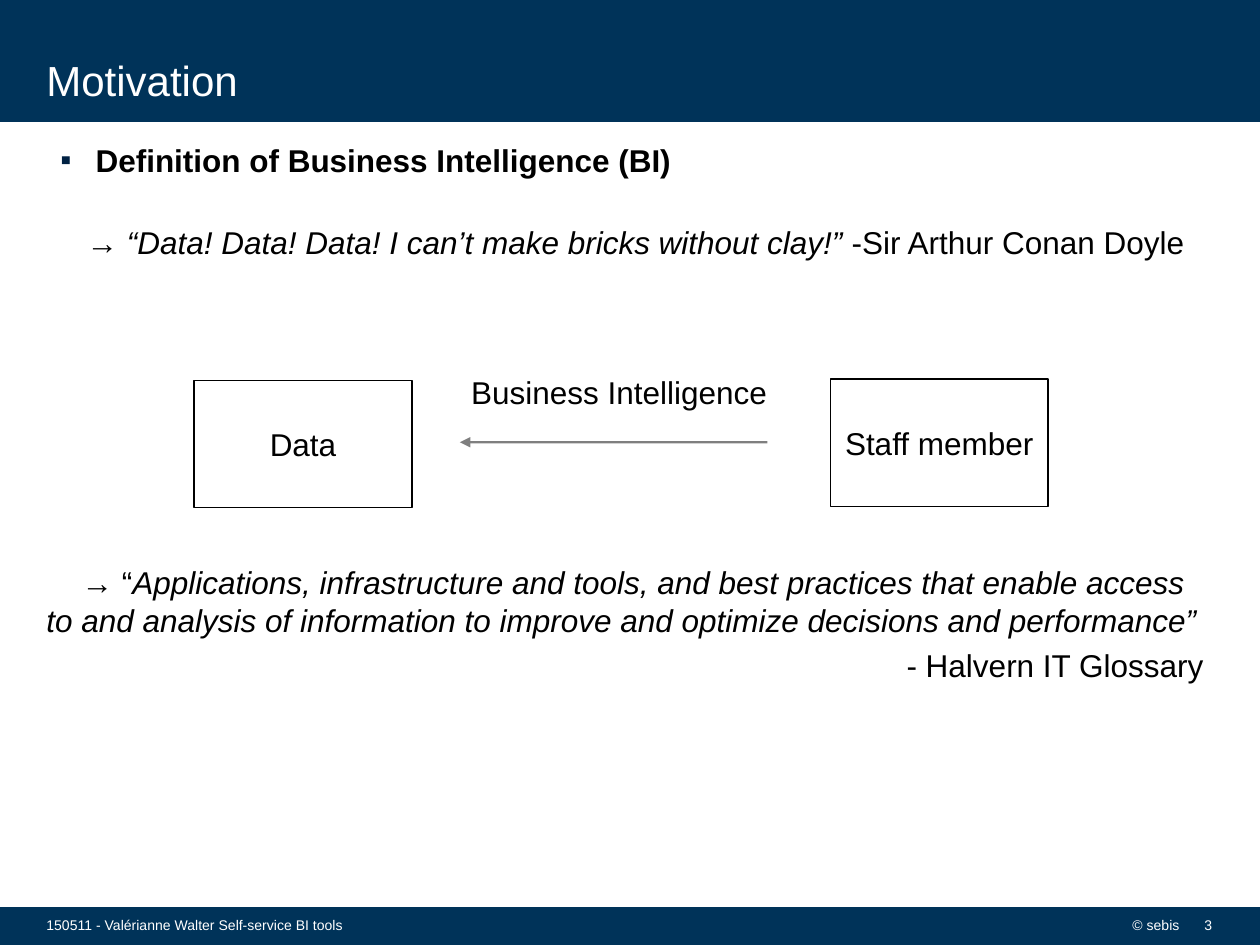
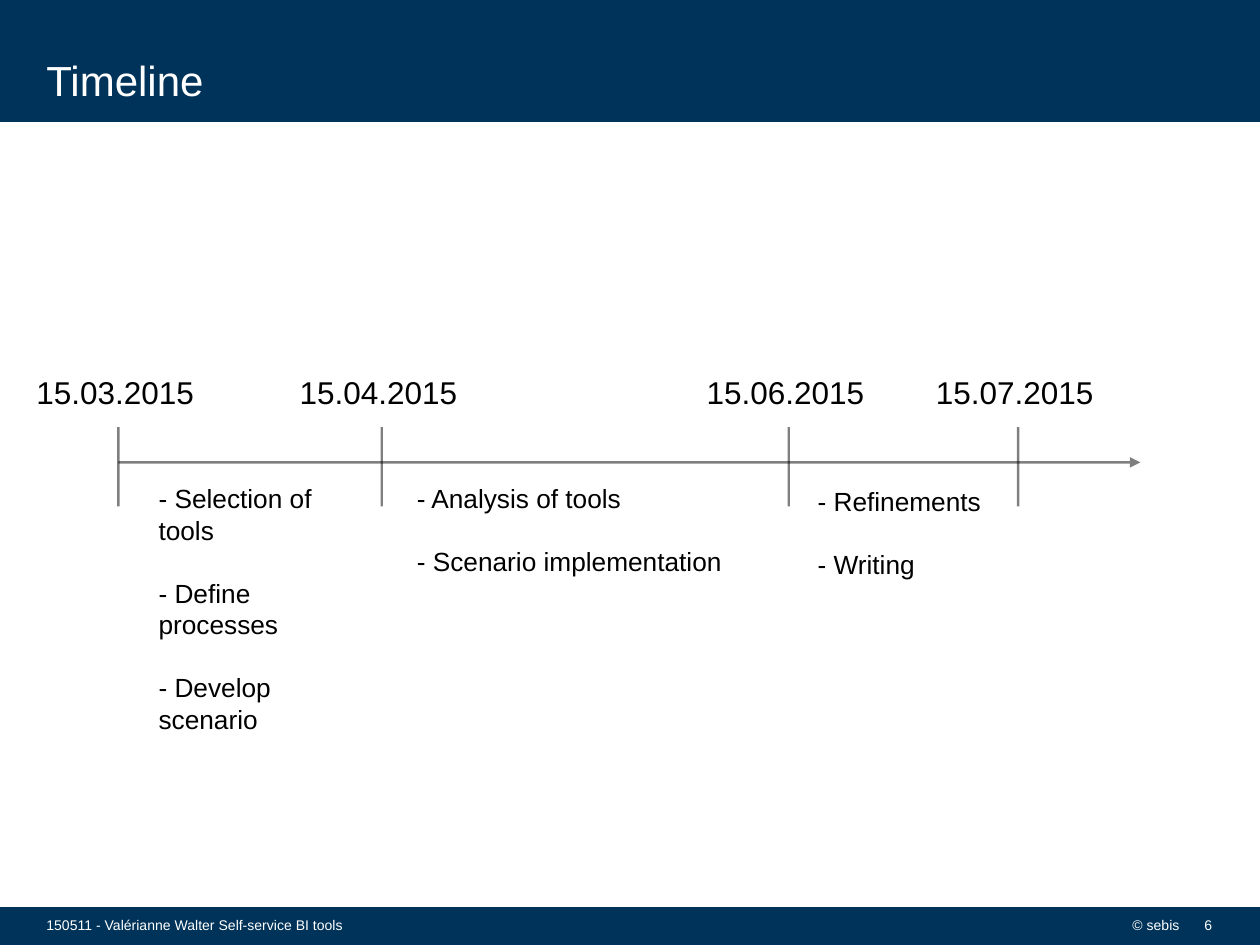
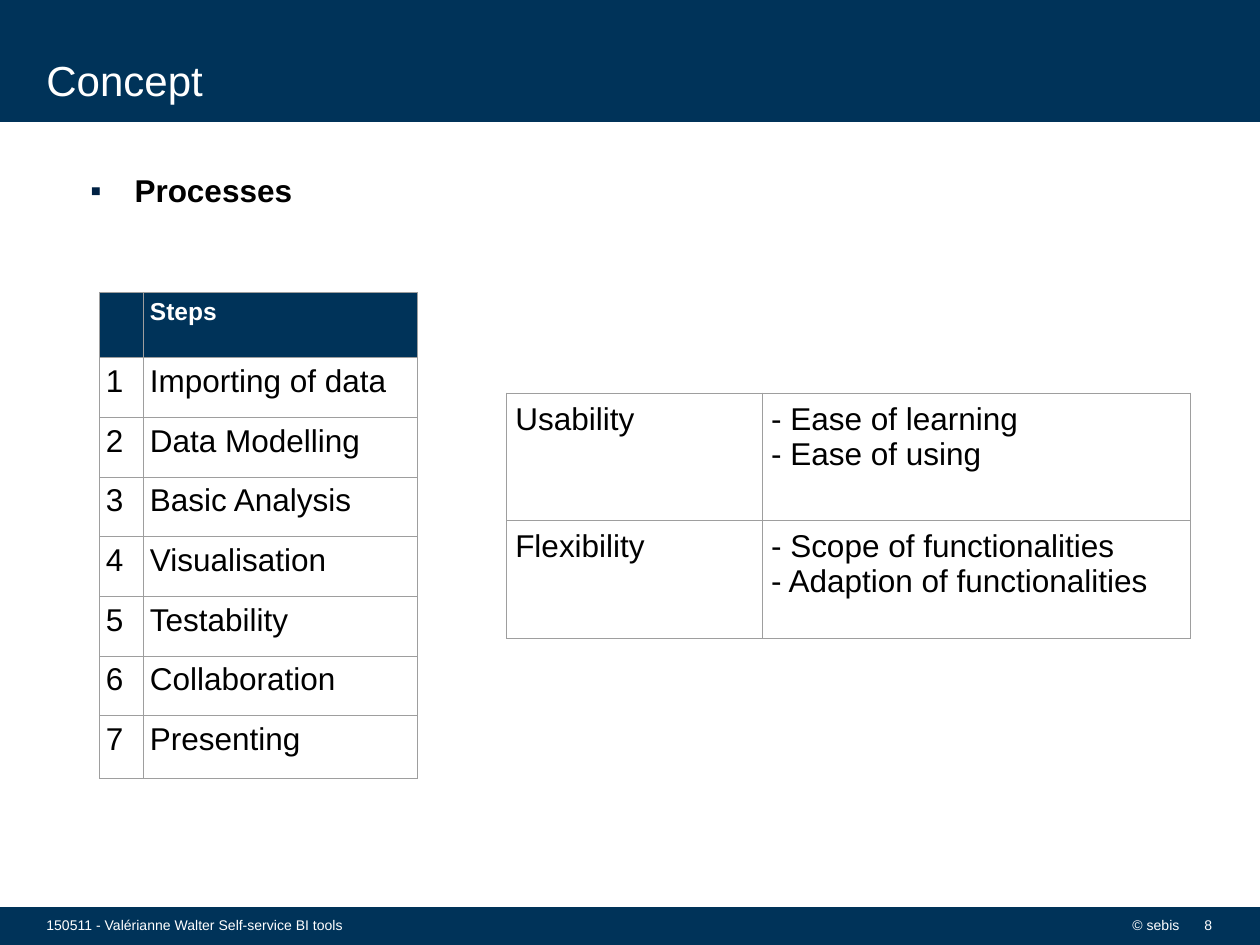
from lxml import etree
from pptx import Presentation
from pptx import util as u
from pptx.dml.color import RGBColor
from pptx.enum import shapes, text
from pptx.oxml import parse_xml
from pptx.oxml.ns import nsdecls, qn

COLORS = {"navy": "003359", "bullet": "002143", "white": "FFFFFF",
          "black": "000000", "border": "9E9E9E"}
RGB = {name: RGBColor.from_string(value) for name, value in COLORS.items()}
FONT = "Arial"
LEFT, RIGHT = text.PP_ALIGN.LEFT, text.PP_ALIGN.RIGHT
TOP, MIDDLE, BOTTOM = (text.MSO_ANCHOR.TOP, text.MSO_ANCHOR.MIDDLE,
                       text.MSO_ANCHOR.BOTTOM)


def add_text(page, lines, left, top, width, height, size=18, color="black",
             bold=False, align=LEFT, anchor=TOP, gap=0, bullet_indent=None):
    """Each line is a string or a list of (words, italic) spans."""
    box = page.shapes.add_textbox(u.Inches(left), u.Inches(top),
                                  u.Inches(width), u.Inches(height))
    frame = box.text_frame
    frame.word_wrap = True
    frame.vertical_anchor = anchor
    for index, line in enumerate(lines):
        para = frame.paragraphs[0] if index == 0 else frame.add_paragraph()
        para.alignment = align
        if index:
            para.space_before = u.Pt(gap)
        spans = [(line, False)] if isinstance(line, str) else line
        for words, italic in spans:
            span = para.add_run()
            span.text = words
            if italic:
                span.font.italic = True
        if bullet_indent and index == 0:
            margin, hanging = bullet_indent
            props = para._p.get_or_add_pPr()
            props.set("marL", str(u.Inches(margin)))
            props.set("indent", str(u.Inches(-hanging)))
            props.append(parse_xml(f'<a:buClr {nsdecls("a")}><a:srgbClr val="{COLORS["bullet"]}"/></a:buClr>'))
            props.append(parse_xml(f'<a:buFont {nsdecls("a")} typeface="{FONT}"/>'))
            props.append(parse_xml(f'<a:buChar {nsdecls("a")} char="▪"/>'))
        para.font.name, para.font.size = FONT, u.Pt(size)
        para.font.bold, para.font.color.rgb = bold, RGB[color]
    return box


def add_line(page, x1, y1, x2, y2, arrow=False):
    line = page.shapes.add_connector(shapes.MSO_CONNECTOR.STRAIGHT, u.Inches(x1),
                                     u.Inches(y1), u.Inches(x2), u.Inches(y2))
    line.line.color.rgb, line.line.width = RGB["black"], u.Pt(1.35)
    props = line._element.spPr
    color = props.find(".//" + qn("a:srgbClr"))
    etree.SubElement(color, qn("a:alpha"), val="50000")
    if arrow:
        etree.SubElement(props.find(qn("a:ln")), qn("a:tailEnd"), type="triangle")
    etree.SubElement(props, qn("a:effectLst"))


deck = Presentation()
deck.slide_width, deck.slide_height = u.Inches(10), u.Inches(7.5)

# Bands, title and footer of every slide
pages = []
for title, number in [("Motivation", "3"), ("Timeline", "6"), ("Concept", "8")]:
    page = deck.slides.add_slide(deck.slide_layouts[6])
    for top, height in [(7.21, 0.29), (0.01, 0.95)]:
        band = page.shapes.add_shape(shapes.MSO_SHAPE.RECTANGLE, 0, u.Inches(top),
                                     deck.slide_width, u.Inches(height))
        band.shadow.inherit = False
        band.fill.solid()
        band.fill.fore_color.rgb = band.line.color.rgb = RGB["navy"]
        band.line.width = u.Pt(1.35)
    heading = add_text(page, [title], 0.27, 0.04, 8.24, 0.79, 24, "white", anchor=BOTTOM)
    heading.text_frame.margin_top = heading.text_frame.margin_bottom = 0
    for words, left, width, align in [
            ("© sebis", 7.7, 1.76, RIGHT),
            ("150511 - Valérianne Walter Self-service BI tools", 0.27, 4.73, LEFT),
            (number, 9.45, 0.27, RIGHT)]:
        add_text(page, [words], left, 7.18, width, 0.32, 8, "white",
                 align=align, anchor=MIDDLE)
    pages.append(page)
motivation, timeline, concept = pages

# Motivation: definition and quotes
add_text(motivation, ["Definition of Business Intelligence (BI)"],
         0.27, 1.07, 9.45, 0.4, bold=True, bullet_indent=(0.39, 0.28))
add_text(motivation, [[("→ ", False),
                       ("“Data! Data! Data! I can’t make bricks without clay!”", True),
                       (" -Sir Arthur Conan Doyle", False)]],
         0.59, 1.72, 9.13, 0.4)
glossary = add_text(motivation, [
    [("→ “", False),
     ("Applications, infrastructure and tools, and best practices that enable access "
      "to and analysis of information to improve and optimize decisions and "
      "performance”", True)],
    "- Halvern IT Glossary"], 0.27, 4.42, 9.38, 1.05, gap=4)
quote, source = glossary.text_frame.paragraphs
quote._p.get_or_add_pPr().set("indent", str(u.Inches(0.28)))
source.alignment = RIGHT

# Motivation: staff member reaches the data through BI
for label, left, top in [("Data", 1.54, 3.02), ("Staff member", 6.59, 3.01)]:
    box = motivation.shapes.add_shape(shapes.MSO_SHAPE.RECTANGLE, u.Inches(left),
                                      u.Inches(top), u.Inches(1.73), u.Inches(1.01))
    box.shadow.inherit = False
    box.fill.solid()
    box.fill.fore_color.rgb = RGB["white"]
    box.line.color.rgb, box.line.width = RGB["black"], u.Pt(0.85)
    box.text_frame.text = label
    para = box.text_frame.paragraphs[0]
    para.alignment = text.PP_ALIGN.CENTER
    para.font.name, para.font.size = FONT, u.Pt(18)
    para.font.color.rgb = RGB["black"]
add_line(motivation, 6.09, 3.51, 3.65, 3.51, arrow=True)
add_text(motivation, ["Business Intelligence"], 3.64, 2.91, 2.81, 0.4)

# Timeline: axis, milestones and the work between them
add_line(timeline, 0.94, 3.67, 9.05, 3.67, arrow=True)
for date, x in [("15.03.2015", 0.94), ("15.04.2015", 3.03),
                ("15.06.2015", 6.26), ("15.07.2015", 8.08)]:
    add_line(timeline, x, 3.39, x, 4.02)
    add_text(timeline, [date], x - 0.75, 2.91, 1.5, 0.4)
for tasks, left, top, width, height in [
        (["- Selection of tools", "- Define processes", "- Develop scenario"],
         1.16, 3.78, 1.69, 2.12),
        (["- Analysis of tools", "- Scenario implementation"], 3.21, 3.78, 2.99, 0.86),
        (["- Refinements", "- Writing"], 6.39, 3.8, 1.68, 0.86)]:
    add_text(timeline, tasks, left, top, width, height, 15, gap=18)

# Concept: process steps and criteria
add_text(concept, ["Processes"], 0.51, 1.31, 9, 0.4, bold=True,
         bullet_indent=(0.46, 0.35))
steps = ["Importing of data", "Data Modelling", "Basic Analysis", "Visualisation",
         "Testability", "Collaboration", "Presenting"]
step_rows = [("", "Steps")] + [(str(n), step) for n, step in enumerate(steps, 1)]
step_height = (3.86 - 0.52 - 0.5) / 6
criteria_rows = [
    ("Usability", "- Ease of learning\n- Ease of using"),
    ("Flexibility", "- Scope of functionalities\n- Adaption of functionalities")]
for rows, left, top, widths, heights, inset, has_header in [
        (step_rows, 0.79, 2.32, [0.35, 2.17], [0.52] + [step_height] * 6 + [0.5],
         0.05, True),
        (criteria_rows, 4.02, 3.12, [2.03, 3.4], [1.01, 0.94], 0.07, False)]:
    table = concept.shapes.add_table(
        len(rows), len(widths), u.Inches(left), u.Inches(top),
        u.Inches(sum(widths)), u.Inches(sum(heights))).table
    table.first_row, table.horz_banding = has_header, False
    for column, width in zip(table.columns, widths):
        column.width = u.Inches(width)
    for r, (row, height) in enumerate(zip(rows, heights)):
        table.rows[r].height = u.Inches(height)
        is_header = has_header and r == 0
        for c, words in enumerate(row):
            cell = table.cell(r, c)
            cell.text = words
            cell.margin_left = cell.margin_right = u.Inches(inset)
            cell.margin_top = cell.margin_bottom = u.Inches(inset)
            for para in cell.text_frame.paragraphs:
                para.font.name = FONT
                para.font.size = u.Pt(14 if is_header else 18)
                para.font.bold = is_header
                para.font.color.rgb = RGB["white" if is_header else "black"]
            props = cell._tc.get_or_add_tcPr()
            for side in ("lnL", "lnR", "lnT", "lnB"):
                props.append(parse_xml(
                    f'<a:{side} {nsdecls("a")} w="{u.Pt(0.5)}"><a:solidFill>'
                    f'<a:srgbClr val="{COLORS["border"]}"/></a:solidFill></a:{side}>'))
            cell.fill.solid()
            cell.fill.fore_color.rgb = RGB["navy" if is_header else "white"]

deck.save("out.pptx")
